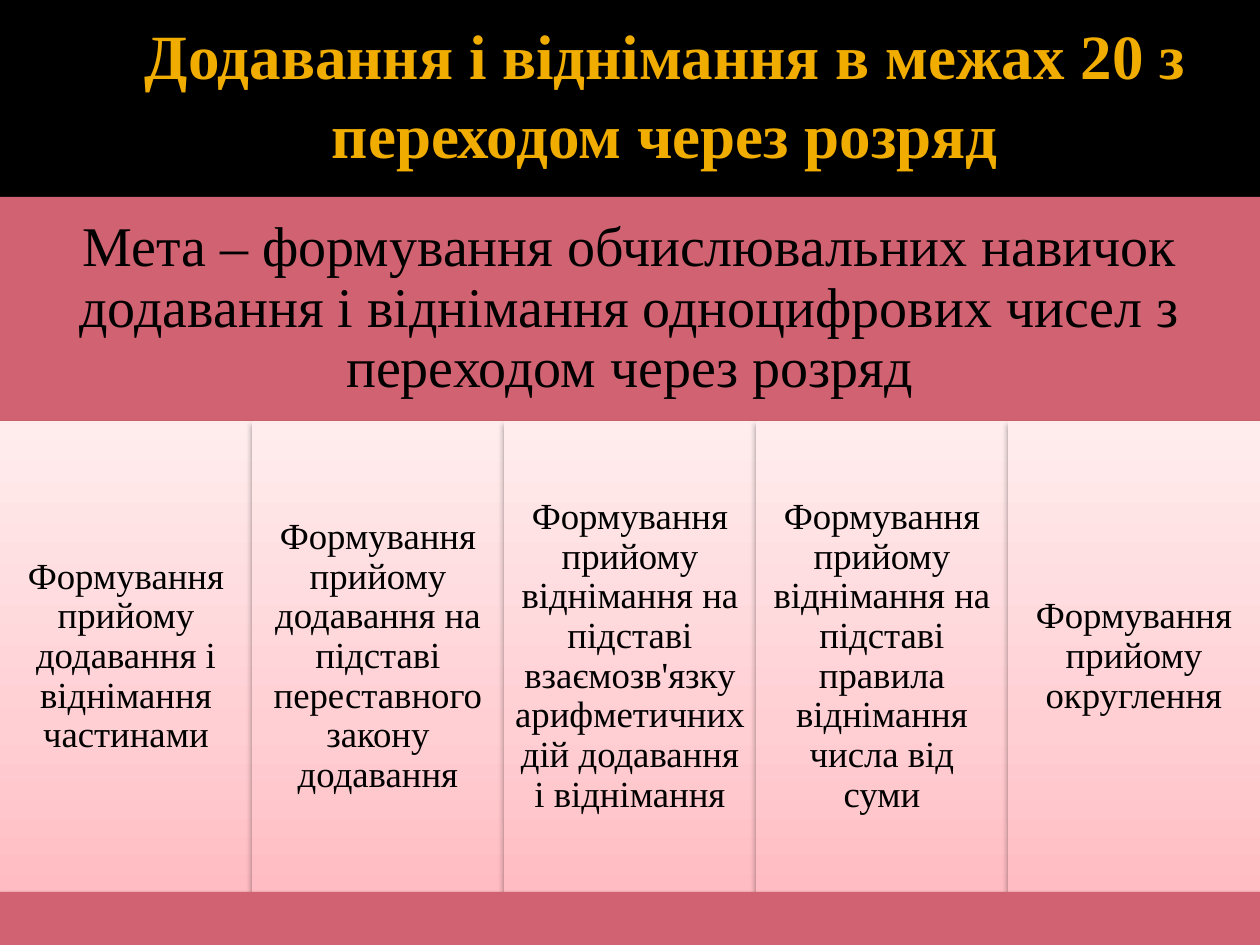
from copy import deepcopy
from dataclasses import dataclass

from lxml.etree import SubElement
from pptx import Presentation
from pptx.dml.color import RGBColor as RGB
from pptx.enum.shapes import MSO_SHAPE as SHAPE
from pptx.enum.text import MSO_ANCHOR as ANCHOR, MSO_AUTO_SIZE as FIT, PP_ALIGN as ALIGN
from pptx.oxml.ns import qn
from pptx.util import Emu, Pt

PX = 914400 / 126


@dataclass(frozen=True)
class Theme:
    font: str = "Times New Roman"
    black: str = "000000"
    gold: str = "F0AD00"
    rose: str = "D16271"
    blush: tuple = ((0, "FFBCC2"), (0.35, "FFCFD3"), (1, "FFEDEE"))
    title_size: int = 36
    goal_size: int = 32
    step_size: int = 21


@dataclass(frozen=True)
class Box:
    x: int
    y: int
    w: int
    h: int


@dataclass(frozen=True)
class Panel:
    box: Box
    fill: str | tuple
    text: str = ""
    size: int = 0
    inset: int = 0
    shadow: bool = True


T = Theme()
W, H = 1260, 945
GOAL_Y, STEPS_Y, FOOT_Y = 197, 421, 892
TITLE = "Додавання і віднімання в межах 20 з переходом через розряд"
GOAL = ("Мета – формування обчислювальних навичок додавання і віднімання "
        "одноцифрових чисел з переходом через розряд")
STEPS = (
    "Формування прийому додавання і віднімання частинами",
    "Формування прийому додавання на підставі переставного закону додавання",
    "Формування прийому віднімання на підставі взаємозв'язку арифметичних дій додавання і віднімання",
    "Формування прийому віднімання на підставі правила віднімання числа від суми",
    "Формування прийому округлення",
)


def px(n: int) -> Emu:
    return Emu(round(n * PX))


def assign(obj, values: dict) -> None:
    for name, value in values.items():
        setattr(obj, name, value)


def write(sp, text: str, size: int, color: str, insets: tuple, spacing: float, bold: bool = False) -> None:
    tf = sp.text_frame
    sides = ("margin_left", "margin_top", "margin_right", "margin_bottom")
    assign(tf, dict(zip(sides, map(px, insets))))
    assign(tf, {"word_wrap": True, "auto_size": FIT.NONE, "vertical_anchor": ANCHOR.MIDDLE})
    p = tf.paragraphs[0]
    assign(p, {"alignment": ALIGN.CENTER, "line_spacing": spacing})
    r = p.add_run()
    r.text = text
    assign(r.font, {"name": T.font, "size": Pt(size), "bold": bold})
    r.font.color.rgb = RGB.from_string(color)


def paint(sp, fill: str | tuple) -> None:
    if isinstance(fill, str):
        sp.fill.solid()
        sp.fill.fore_color.rgb = RGB.from_string(fill)
        return
    sp.fill.gradient()
    sp.fill.gradient_angle = 90
    stops = sp._element.spPr.find(".//" + qn("a:gsLst"))
    stops.append(deepcopy(stops[0]))
    for stop, (position, color) in zip(sp.fill.gradient_stops, fill):
        stop.position = position
        stop.color.rgb = RGB.from_string(color)


def cast_shadow(sp) -> None:
    effects = sp._element.spPr.find(qn("a:effectLst"))
    shadow = SubElement(effects, qn("a:outerShdw"), blurRad=str(Pt(3.5)), dist=str(Pt(2)),
                        dir="5400000", rotWithShape="0")
    color = SubElement(shadow, qn("a:srgbClr"), val=T.black)
    SubElement(color, qn("a:alpha"), val="38000")


def draw_panel(s, panel: Panel) -> None:
    b = panel.box
    sp = s.shapes.add_shape(SHAPE.RECTANGLE, px(b.x), px(b.y), px(b.w), px(b.h))
    sp.shadow.inherit = False
    sp.line.fill.background()
    paint(sp, panel.fill)
    if panel.shadow:
        cast_shadow(sp)
    if panel.text:
        write(sp, panel.text, panel.size, T.black, (panel.inset,) * 4, 0.9)


def draw_title(s, box: Box) -> None:
    sp = s.shapes.title
    assign(sp, {"left": px(box.x), "top": px(box.y), "width": px(box.w), "height": px(box.h)})
    write(sp, TITLE, T.title_size, T.gold, (13, 6, 6, 6), 1.05, True)
    s.shapes._spTree.append(sp._element)


def main() -> None:
    prs = Presentation()
    assign(prs, {"slide_width": px(W), "slide_height": px(H)})
    s = prs.slides.add_slide(prs.slide_layouts[5])
    draw_panel(s, Panel(Box(0, 0, W, GOAL_Y), T.black, shadow=False))
    draw_title(s, Box(126, 29, 1071, 126))
    draw_panel(s, Panel(Box(0, GOAL_Y, W, STEPS_Y - GOAL_Y), T.rose, GOAL, T.goal_size, 16))
    step_w = W // len(STEPS)
    for i, step in enumerate(STEPS):
        box = Box(i * step_w, STEPS_Y, step_w, FOOT_Y - STEPS_Y)
        draw_panel(s, Panel(box, T.blush, step, T.step_size, 11))
    draw_panel(s, Panel(Box(0, FOOT_Y, W, H - FOOT_Y), T.rose))
    prs.save("out.pptx")


if __name__ == "__main__":
    main()
